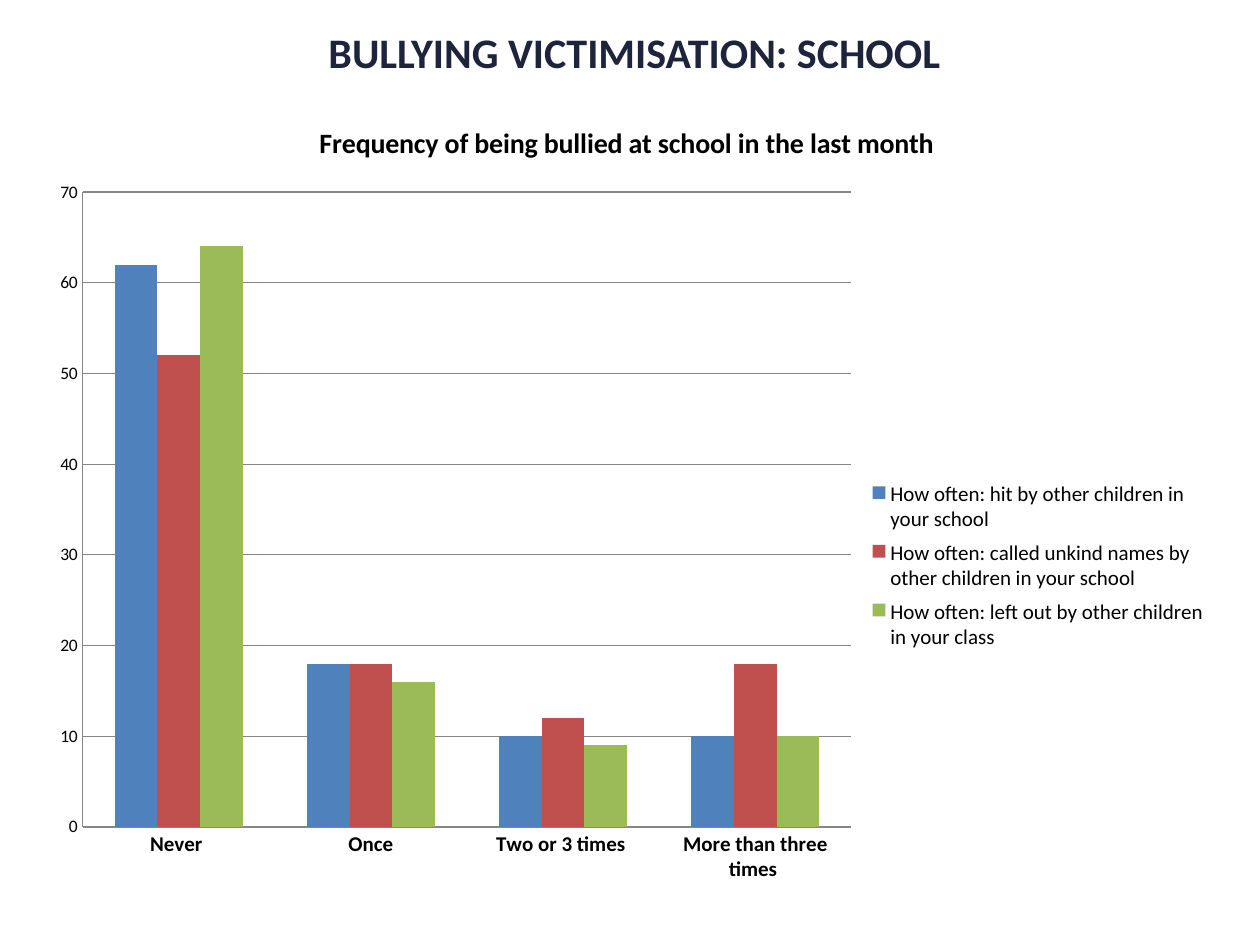
import pptx
import pptx.chart.data
import pptx.dml.color
import pptx.enum.chart
import pptx.enum.text
import pptx.oxml
import pptx.oxml.ns
import pptx.util
from pptx.util import Cm

FONT = "Calibri"
COLOURS = {
    "title": "1D243C",
    "text": "000000",
    "line": "868686",
    "hit": "4F81BD",
    "names": "C0504D",
    "left out": "9BBB59",
}
CATEGORIES = ["Never ", "Once", "Two or 3 times ", "More than three times "]
SERIES = [
    ("How often: hit by other children in your school", "hit", (62, 18, 10, 10)),
    ("How often: called unkind names by other children in your school", "names", (52, 18, 12, 18)),
    ("How often: left out by other children in your class", "left out", (64, 16, 9, 10)),
]


def colour(name):
    return pptx.dml.color.RGBColor.from_string(COLOURS[name])


def format_font(font, size, bold=False, name="text"):
    font.name = FONT
    font.size = pptx.util.Pt(size)
    font.bold = bold
    font.color.rgb = colour(name)


def write_text(text_frame, text, size, bold=False, name="text"):
    text_frame.text = text
    paragraph = text_frame.paragraphs[0]
    paragraph.alignment = pptx.enum.text.PP_ALIGN.CENTER
    format_font(paragraph.runs[0].font, size, bold, name)


def place_part(element, x, y, width, height, inner=False):
    """Fix a chart part's place, as fractions of the chart."""
    for old in element.findall(pptx.oxml.ns.qn("c:layout")):
        element.remove(old)
    target = '<c:layoutTarget val="inner"/>' if inner else ""
    layout = pptx.oxml.parse_xml(
        f'<c:layout {pptx.oxml.ns.nsdecls("c")}><c:manualLayout>{target}'
        '<c:xMode val="edge"/><c:yMode val="edge"/>'
        f'<c:x val="{x}"/><c:y val="{y}"/><c:w val="{width}"/><c:h val="{height}"/>'
        "</c:manualLayout></c:layout>"
    )
    element.insert(0 if inner else 1, layout)


def format_line(line):
    line.color.rgb = colour("line")
    line.width = pptx.util.Pt(0.75)


def format_axis(axis, size, bold=False):
    axis.major_tick_mark = pptx.enum.chart.XL_TICK_MARK.NONE
    axis.minor_tick_mark = pptx.enum.chart.XL_TICK_MARK.NONE
    format_font(axis.tick_labels.font, size, bold)
    format_line(axis.format.line)


def add_title(slide, text):
    title = slide.shapes.title
    title.left, title.top, title.width, title.height = Cm(2.49), Cm(0.41), Cm(20.6), Cm(1.27)
    title.text_frame.vertical_anchor = pptx.enum.text.MSO_ANCHOR.TOP
    write_text(title.text_frame, text, 24, bold=True, name="title")


def add_frequency_chart(slide):
    data = pptx.chart.data.CategoryChartData(number_format="General")
    data.categories = CATEGORIES
    for label, _, values in SERIES:
        data.add_series(label, values)
    chart = slide.shapes.add_chart(
        pptx.enum.chart.XL_CHART_TYPE.COLUMN_CLUSTERED,
        Cm(0.71), Cm(1.93), Cm(23.85), Cm(16.2), data,
    ).chart
    format_font(chart.font, 10)
    chart.has_title = True
    write_text(chart.chart_title.text_frame,
               "Frequency of being bullied at school in the last month", 16, bold=True)
    chart.chart_title.include_in_layout = False

    plot = chart.plots[0]
    plot.gap_width = 150
    plot.overlap = 0
    plot.vary_by_categories = False
    for series, (_, name, _) in zip(plot.series, SERIES):
        series.format.fill.solid()
        series.format.fill.fore_color.rgb = colour(name)

    format_axis(chart.category_axis, 12, bold=True)
    format_axis(chart.value_axis, 10)
    chart.value_axis.minimum_scale = 0
    chart.value_axis.maximum_scale = 70
    chart.value_axis.major_unit = 10
    chart.value_axis.has_major_gridlines = True
    format_line(chart.value_axis.major_gridlines.format.line)

    chart.has_legend = True
    chart.legend.position = pptx.enum.chart.XL_LEGEND_POSITION.RIGHT
    chart.legend.include_in_layout = False
    format_font(chart.legend.font, 12)
    plot_area = chart.element.find(".//" + pptx.oxml.ns.qn("c:plotArea"))
    legend = chart.element.find(".//" + pptx.oxml.ns.qn("c:legend"))
    place_part(plot_area, 0.04, 0.12, 0.65, 0.79, inner=True)
    place_part(legend, 0.71, 0.47, 0.28, 0.23)


def main():
    presentation = pptx.Presentation()
    presentation.slide_width, presentation.slide_height = Cm(25.4), Cm(19.05)
    slide = presentation.slides.add_slide(presentation.slide_layouts[5])
    add_title(slide, "BULLYING VICTIMISATION: SCHOOL")
    add_frequency_chart(slide)
    presentation.save("out.pptx")


if __name__ == "__main__":
    main()
